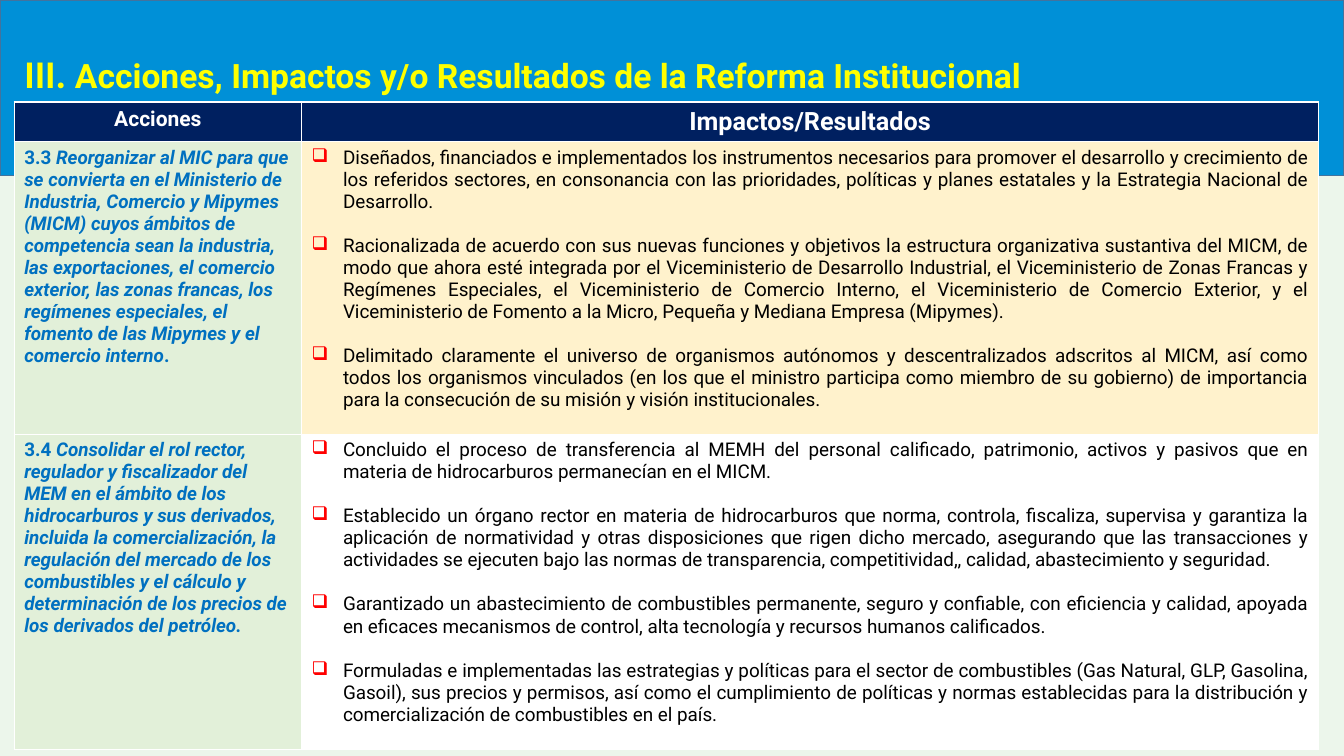
from lxml.etree import SubElement
from pptx import Presentation
from pptx.dml.color import RGBColor
from pptx.enum.shapes import MSO_SHAPE
from pptx.enum.text import MSO_ANCHOR, MSO_AUTO_SIZE, PP_ALIGN
from pptx.oxml.ns import qn
from pptx.util import Cm, Pt

BODY_SIZE = 13.5
LINE_GAP = 15.8
BULLET_INDENT = Cm(0.79)

HEADERS = [("Acciones", 15), ("Impactos/Resultados", 18)]
# Number, action, full stop, results, fill of the results cell
ACTIONS = [
    (
        "3.3 ",
        "Reorganizar al MIC para que se convierta en el Ministerio de Industria, Comercio y Mipymes (MICM) "
        "cuyos ámbitos de competencia sean la industria, las exportaciones, el comercio exterior, las zonas "
        "francas, los regímenes especiales, el fomento de las Mipymes y el comercio interno",
        ".",
        [
            "Diseñados, financiados e implementados los instrumentos necesarios para promover el desarrollo y "
            "crecimiento de los referidos sectores, en consonancia con las prioridades, políticas y planes "
            "estatales y la Estrategia Nacional de Desarrollo.",
            "Racionalizada de acuerdo con sus nuevas funciones y objetivos la estructura organizativa sustantiva "
            "del MICM, de modo que ahora esté integrada por el Viceministerio de Desarrollo Industrial, el "
            "Viceministerio de Zonas Francas y Regímenes Especiales, el Viceministerio de Comercio Interno, el "
            "Viceministerio de Comercio Exterior, y el Viceministerio de Fomento a la Micro, Pequeña y Mediana "
            "Empresa (Mipymes).",
            "Delimitado claramente el universo de organismos autónomos y descentralizados adscritos al MICM, así "
            "como todos los organismos vinculados (en los que el ministro participa como miembro de su gobierno) "
            "de importancia para la consecución de su misión y visión institucionales.",
        ],
        "FFF2CC",
    ),
    (
        "3.4 ",
        "Consolidar el rol rector, regulador y fiscalizador del MEM en el ámbito de los hidrocarburos y sus "
        "derivados, incluida la comercialización, la regulación del mercado de los combustibles y el cálculo y "
        "determinación de los precios de los derivados del petróleo.",
        "",
        [
            "Concluido el proceso de transferencia al MEMH del personal calificado, patrimonio, activos y pasivos "
            "que en materia de hidrocarburos permanecían en el MICM.",
            "Establecido un órgano rector en materia de hidrocarburos que norma, controla, fiscaliza, supervisa y "
            "garantiza la aplicación de normatividad y otras disposiciones que rigen dicho mercado, asegurando "
            "que las transacciones y actividades se ejecuten bajo las normas de transparencia, competitividad,, "
            "calidad, abastecimiento y seguridad.",
            "Garantizado un abastecimiento de combustibles permanente, seguro y confiable, con eficiencia y "
            "calidad, apoyada en eficaces mecanismos de control, alta tecnología y recursos humanos calificados.",
            "Formuladas e implementadas las estrategias y políticas para el sector de combustibles (Gas Natural, "
            "GLP, Gasolina, Gasoil), sus precios y permisos, así como el cumplimiento de políticas y normas "
            "establecidas para la distribución y comercialización de combustibles en el país.",
        ],
        "FFFFFF",
    ),
]


def paint(fill, color):
    fill.solid()
    fill.fore_color.rgb = RGBColor.from_string(color)


def add_run(paragraph, text, size, color, bold=True, italic=False, font_name="Roboto"):
    run = paragraph.add_run()
    run.text = text
    run.font.name = font_name
    run.font.size = Pt(size)
    run.font.bold = bold
    run.font.italic = italic
    paint(run.font.fill, color)


presentation = Presentation()
presentation.slide_width = Cm(33.87)
presentation.slide_height = Cm(19.05)
slide = presentation.slides.add_slide(presentation.slide_layouts[5])
paint(slide.background.fill, "ECF6EB")

# Title over the blue band
title = slide.shapes.title
band = slide.shapes.add_shape(MSO_SHAPE.RECTANGLE, 0, 0, presentation.slide_width, Cm(4.42))
band.shadow.inherit = False
paint(band.fill, "0090D7")
paint(band.line.fill, "43739E")
band.line.width = Pt(1)
title._element.addprevious(band._element)

title.left, title.top, title.width, title.height = Cm(0.36), Cm(1.12), Cm(30.56), Cm(1.45)
title_frame = title.text_frame
title_frame.auto_size = MSO_AUTO_SIZE.NONE
title_frame.vertical_anchor = MSO_ANCHOR.TOP
paragraph = title_frame.paragraphs[0]
paragraph.alignment = PP_ALIGN.LEFT
paragraph.line_spacing = 1.0
add_run(paragraph, "III. ", 28, "FFFF00", font_name="Calibri")
add_run(paragraph, "Acciones, Impactos y/o Resultados de la Reforma Institucional", 24, "FFFF00")

# Table of actions and results
column_widths = [Cm(7.24), Cm(25.63)]
row_heights = [Cm(0.99), Cm(7.37), Cm(7.94)]
table = slide.shapes.add_table(
    3, 2, Cm(0.36), Cm(2.57), sum(column_widths), sum(row_heights)
).table
table.horz_banding = False
for column, width in zip(table.columns, column_widths):
    column.width = width
for row, height in zip(table.rows, row_heights):
    row.height = height

for cell, (header, size) in zip(table.rows[0].cells, HEADERS):
    paint(cell.fill, "002060")
    paragraph = cell.text_frame.paragraphs[0]
    paragraph.alignment = PP_ALIGN.CENTER
    add_run(paragraph, header, size, "FFFFFF")

for row_index, (number, action, stop, results, results_fill) in enumerate(ACTIONS, start=1):
    action_cell, results_cell = table.rows[row_index].cells
    paint(action_cell.fill, "E2F0D9")
    paint(results_cell.fill, results_fill)

    paragraph = action_cell.text_frame.paragraphs[0]
    add_run(paragraph, number, BODY_SIZE, "0070C0")
    add_run(paragraph, action, BODY_SIZE, "0070C0", italic=True)
    if stop:
        add_run(paragraph, stop, BODY_SIZE, "0070C0")

    results_frame = results_cell.text_frame
    for result_index, result in enumerate(results):
        paragraph = results_frame.add_paragraph() if result_index else results_frame.paragraphs[0]
        properties = paragraph._p.get_or_add_pPr()
        properties.set("marL", str(BULLET_INDENT))
        properties.set("indent", str(-BULLET_INDENT))
        bullet_color = SubElement(properties, qn("a:buClr"))
        SubElement(bullet_color, qn("a:srgbClr"), val="FF0000")
        SubElement(properties, qn("a:buChar"), char="❑")
        paragraph.alignment = PP_ALIGN.JUSTIFY
        if result_index:
            paragraph.space_before = Pt(LINE_GAP)
        add_run(paragraph, result, BODY_SIZE, "000000", bold=False)

presentation.save("out.pptx")
